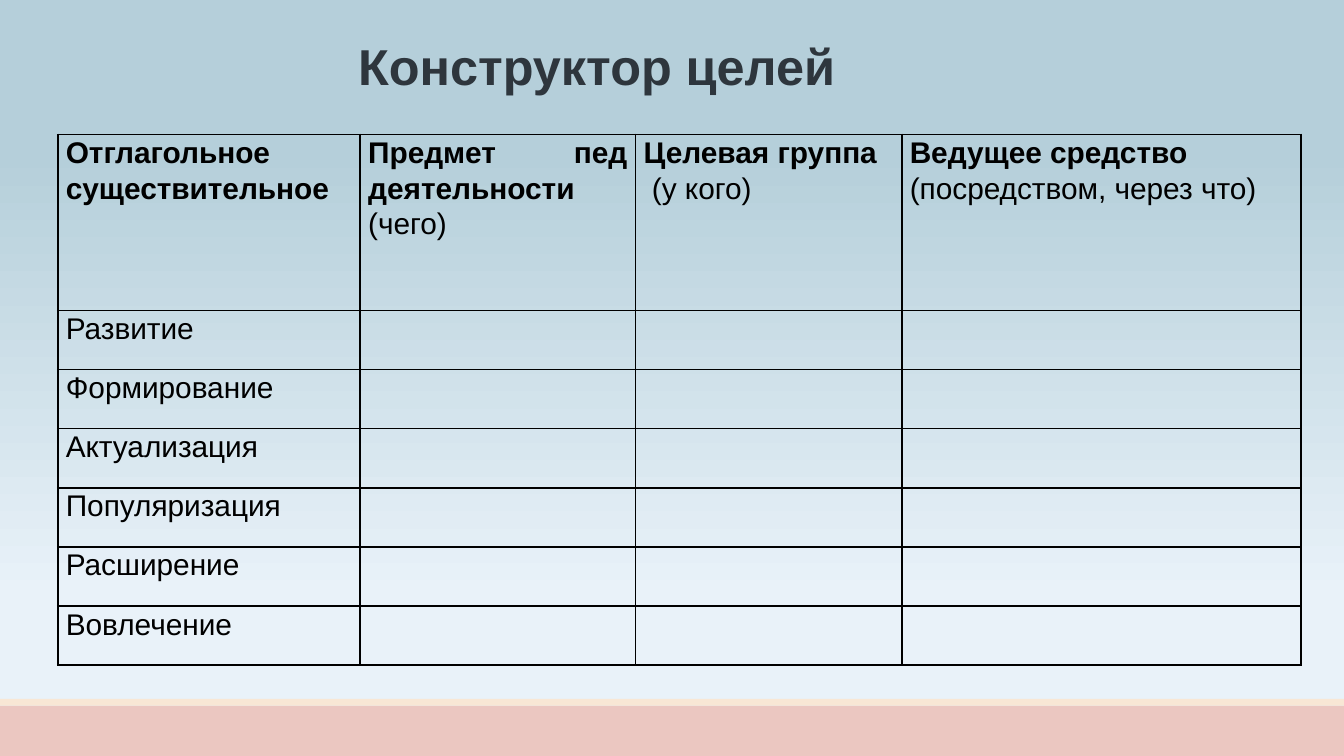
from lxml.etree import SubElement
from pptx import Presentation
from pptx.dml.color import RGBColor
from pptx.enum.shapes import MSO_SHAPE
from pptx.enum.text import MSO_ANCHOR, MSO_AUTO_SIZE, PP_ALIGN
from pptx.oxml.ns import qn
from pptx.util import Inches, Pt

# Content: each paragraph is a list of (text, bold) runs
TITLE = "Конструктор целей"
HEADERS = [
    [[("Отглагольное существительное", True)]],
    [[("Предмет пед деятельности ", True), ("(чего)", False)]],
    [[("Целевая группа", True)], [(" ", True), ("(у кого)", False)]],
    [[("Ведущее средство ", True)], [("(посредством, через что)", False)]],
]
GOALS = ["Развитие", "Формирование", "Актуализация",
         "Популяризация", "Расширение", "Вовлечение"]

# Look and layout, in inches; the slide is 16:9
COLORS = {"sky": "B5CFDA", "mist": "E9F2F9", "rose": "EBC7C1",
          "cream": "F8E7D5", "title": "2E363D", "black": "000000"}
GRADIENT = [(0, "sky"), (20, "sky"), (79, "mist"), (100, "mist")]
WIDTH = 10
HEIGHT = WIDTH * 9 / 16
BANDS = [("rose", 5.25, HEIGHT - 5.25), ("cream", 5.2, 0.05)]
TABLE_LEFT, TABLE_TOP = 0.43, 1
COLUMNS = [2.25, 2.05, 1.98, 2.97]
ROWS = [1.31] + [0.44] * len(GOALS)


def write_text(frame, paragraphs, size=16, color="black",
               align=PP_ALIGN.JUSTIFY, spacing=None):
    for index, runs in enumerate(paragraphs):
        paragraph = frame.paragraphs[0] if index == 0 else frame.add_paragraph()
        paragraph.alignment = align
        paragraph.line_spacing = spacing
        for text, bold in runs:
            run = paragraph.add_run()
            run.text = text
            run.font.name = "Arial"
            run.font.size = Pt(size)
            run.font.bold = bold
            run.font.color.rgb = RGBColor.from_string(COLORS[color])


def set_borders(cell):
    properties = cell._tc.get_or_add_tcPr()
    for index, side in enumerate(("lnL", "lnR", "lnT", "lnB")):
        line = SubElement(properties, qn(f"a:{side}"), w=str(Pt(1)))
        fill = SubElement(line, qn("a:solidFill"))
        SubElement(fill, qn("a:srgbClr"), val=COLORS["black"])
        properties.insert(index, line)


presentation = Presentation()
presentation.slide_width = Inches(WIDTH)
presentation.slide_height = Inches(HEIGHT)
slide = presentation.slides.add_slide(presentation.slide_layouts[6])

# Background gradient, top to bottom
background = slide.background.fill
background.gradient()
background.gradient_angle = 270
stops = slide.element.xpath(".//p:bg//a:gsLst")[0]
for stop in list(stops):
    stops.remove(stop)
for percent, color in GRADIENT:
    stop = SubElement(stops, qn("a:gs"), pos=str(percent * 1000))
    SubElement(stop, qn("a:srgbClr"), val=COLORS[color])

# Bands at the foot
for color, top, height in BANDS:
    band = slide.shapes.add_shape(MSO_SHAPE.RECTANGLE, 0, Inches(top),
                                  Inches(WIDTH), Inches(height))
    band.shadow.inherit = False
    band.fill.solid()
    band.fill.fore_color.rgb = RGBColor.from_string(COLORS[color])
    band.line.fill.background()

# Table of goals
table = slide.shapes.add_table(
    len(ROWS), len(COLUMNS), Inches(TABLE_LEFT), Inches(TABLE_TOP),
    Inches(sum(COLUMNS)), Inches(sum(ROWS))).table
table.first_row = table.horz_banding = False
for column, width in zip(table.columns, COLUMNS):
    column.width = Inches(width)
for row, height in zip(table.rows, ROWS):
    row.height = Inches(height)
for cell in table.iter_cells():
    cell.fill.background()
    cell.margin_left = cell.margin_right = Inches(0.06)
    cell.margin_top = cell.margin_bottom = 0
    set_borders(cell)
for column, paragraphs in enumerate(HEADERS):
    write_text(table.cell(0, column).text_frame, paragraphs, spacing=1.07)
for row, goal in enumerate(GOALS, start=1):
    write_text(table.cell(row, 0).text_frame, [[(goal, False)]], spacing=1.07)

# Title
title = slide.shapes.add_textbox(Inches(2.57), Inches(0.22),
                                 Inches(3.74), Inches(0.53))
frame = title.text_frame
frame.word_wrap = False
frame.auto_size = MSO_AUTO_SIZE.SHAPE_TO_FIT_TEXT
frame.vertical_anchor = MSO_ANCHOR.MIDDLE
frame.margin_left = frame.margin_right = Inches(0.07)
frame.margin_top = frame.margin_bottom = Inches(0.04)
write_text(frame, [[(TITLE, True)]], size=27, color="title",
           align=PP_ALIGN.CENTER)

presentation.save("out.pptx")
